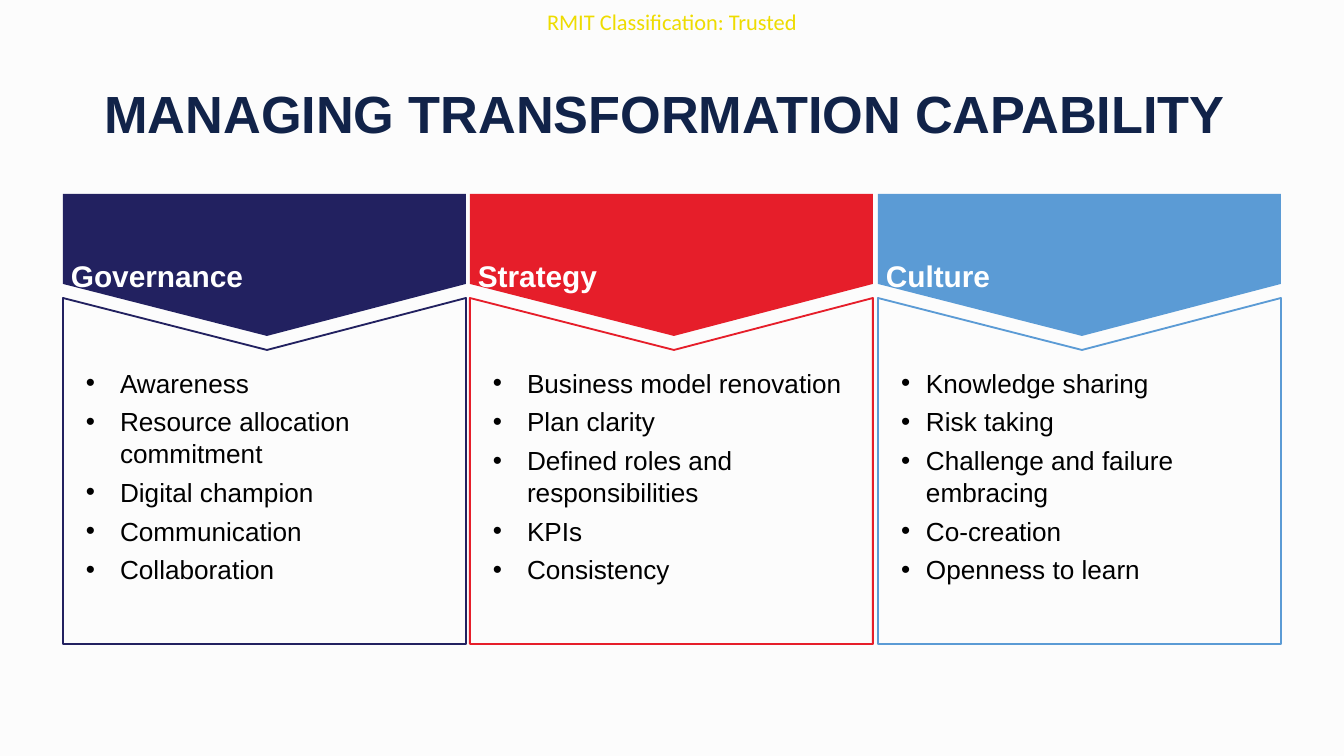
import lxml.etree
import pptx
import pptx.dml.color
import pptx.enum.text
import pptx.oxml.ns
import pptx.util

ALIGN = pptx.enum.text.PP_ALIGN
ANCHOR = pptx.enum.text.MSO_ANCHOR
SCALE = 914400 / 134.4  # EMU in one px

COLORS = {
    "back": "FCFCFC",
    "title": "112349",
    "label": "EEDC00",
    "white": "FFFFFF",
    "black": "000000",
    "navy": "222160",
    "red": "E61E2A",
    "blue": "5B9BD5",
}

PANELS = [
    ("Governance", "navy", 34,
     ["Awareness", "Resource allocation commitment", "Digital champion",
      "Communication", "Collaboration"]),
    ("Strategy", "red", 34,
     ["Business model renovation", "Plan clarity",
      "Defined roles and responsibilities", "KPIs", "Consistency"]),
    ("Culture", "blue", 25,
     ["Knowledge sharing", "Risk taking", "Challenge and failure embracing",
      "Co-creation", "Openness to learn"]),
]


def px(n):
    return pptx.util.Emu(round(n * SCALE))


def rgb(name):
    return pptx.dml.color.RGBColor.from_string(COLORS[name])


def place(shape, x, y, w, h):
    shape.left, shape.top, shape.width, shape.height = map(px, (x, y, w, h))


def add_bullet(para, hang):
    props = para._p.get_or_add_pPr()
    props.set("marL", str(px(hang)))
    props.set("indent", str(-px(hang)))
    qn = pptx.oxml.ns.qn
    lxml.etree.SubElement(props, qn("a:buFont"), typeface="Arial")
    lxml.etree.SubElement(props, qn("a:buChar"), char="•")


def write(shape, lines, size, color, font="Arial", bold=False,
          align=ALIGN.LEFT, anchor=ANCHOR.TOP, inset=(0, 0, 0, 0),
          after=0, hang=0):
    """Fill a shape with one paragraph a line; inset is left, top, right, bottom."""
    frame = shape.text_frame
    frame.word_wrap = True
    frame.auto_size = pptx.enum.text.MSO_AUTO_SIZE.NONE
    frame.vertical_anchor = anchor
    (frame.margin_left, frame.margin_top,
     frame.margin_right, frame.margin_bottom) = map(px, inset)
    for i, line in enumerate(lines):
        para = frame.paragraphs[0] if i == 0 else frame.add_paragraph()
        para.alignment = align
        para.space_before = pptx.util.Pt(0)
        para.space_after = pptx.util.Pt(after)
        if hang:
            add_bullet(para, hang)
        run = para.add_run()
        run.text = line
        run.font.name = font
        run.font.size = pptx.util.Pt(size)
        run.font.bold = bold
        run.font.color.rgb = rgb(color)


def outline(slide, points):
    start, *rest = points
    build = slide.shapes.build_freeform(*start, scale=SCALE)
    build.add_line_segments(rest, close=True)
    shape = build.convert_to_shape()
    shape.shadow.inherit = False
    return shape


def add_label(slide, x, y, w, h):
    box = slide.shapes.add_textbox(px(x), px(y), px(w), px(h))
    write(box, ["RMIT Classification: Trusted"], 12, "label", font="Calibri",
          align=ALIGN.CENTER, anchor=ANCHOR.MIDDLE)


def add_title(slide, x, y, w, h):
    title = slide.shapes.title
    place(title, x, y, w, h)
    write(title, ["MANAGING TRANSFORMATION CAPABILITY"], 28, "title", bold=True,
          align=ALIGN.CENTER, inset=(13, 19, 27, 0))


def add_panel(slide, body, x, y, w, h, name, color, hang, items):
    """Draw an arrow-shaped header over an outlined box with its list."""
    mid, right, low = x + w // 2 + 3, x + w, y + h
    head = outline(slide, [(x, y), (right, y), (right, y + 90),
                           (mid, y + 142), (x, y + 90)])
    head.fill.solid()
    head.fill.fore_color.rgb = rgb(color)
    head.line.fill.background()
    write(head, [name], 16, "white", bold=True, inset=(8, 64, 8, 0))

    frame = outline(slide, [(x, y + 104), (mid, y + 156), (right, y + 104),
                            (right, low), (x, low)])
    frame.fill.background()
    frame.line.color.rgb = rgb(color)
    frame.line.width = pptx.util.Pt(1)

    place(body, x + 23, y + 173, w - 36, 235)
    write(body, items, 14, "black", after=4, hang=hang)


def main():
    deck = pptx.Presentation()
    deck.slide_width, deck.slide_height = px(1344), px(756)
    slide = deck.slides.add_slide(deck.slide_layouts.get_by_name("Comparison"))
    slide.background.fill.solid()
    slide.background.fill.fore_color.rgb = rgb("back")

    add_label(slide, 520, 0, 304, 43)
    add_title(slide, 31, 62, 1281, 85)
    title, *bodies = slide.placeholders
    spare = bodies.pop()
    spare.element.getparent().remove(spare.element)
    for i, (body, panel) in enumerate(zip(bodies, PANELS)):
        add_panel(slide, body, 63 + i * 815 // 2, 194, 403, 450, *panel)
    deck.save("out.pptx")


if __name__ == "__main__":
    main()
